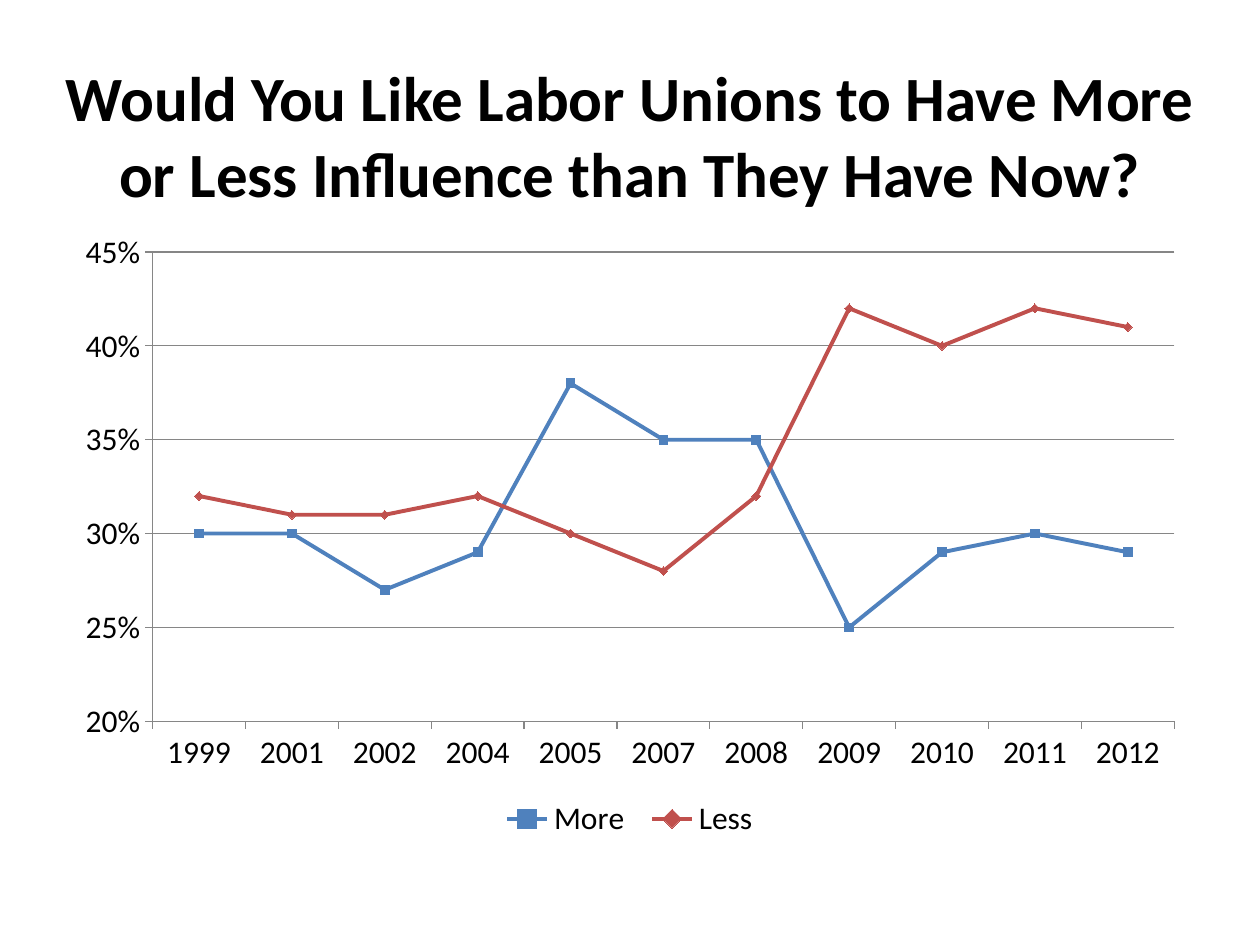
from pptx import Presentation, util as u
from pptx.chart.data import CategoryChartData
from pptx.dml.color import RGBColor
from pptx.enum import chart as ch, text

TITLE = "Would You Like Labor Unions to Have More or Less Influence than They Have Now?"
FONT = "Calibri"
BLACK = RGBColor(0x00, 0x00, 0x00)
GRAY = RGBColor(0x86, 0x86, 0x86)
BLUE = RGBColor(0x4F, 0x81, 0xBD)
RED = RGBColor(0xC0, 0x50, 0x4D)

YEARS = ["1999", "2001", "2002", "2004", "2005", "2007",
         "2008", "2009", "2010", "2011", "2012"]
SERIES = [
    ("More ", BLUE, ch.XL_MARKER_STYLE.SQUARE,
     [0.30, 0.30, 0.27, 0.29, 0.38, 0.35, 0.35, 0.25, 0.29, 0.30, 0.29]),
    ("Less", RED, ch.XL_MARKER_STYLE.DIAMOND,
     [0.32, 0.31, 0.31, 0.32, 0.30, 0.28, 0.32, 0.42, 0.40, 0.42, 0.41]),
]


def set_font(font, size, bold=False):
    font.name, font.size, font.bold = FONT, u.Pt(size), bold
    font.color.rgb = BLACK


def set_line(line, color, width):
    line.color.rgb = color
    line.width = u.Pt(width)


def add_title(slide):
    box = slide.shapes.add_textbox(u.Inches(0.25), u.Inches(0.3),
                                   u.Inches(9.5), u.Inches(1.53))
    tf = box.text_frame
    tf.word_wrap = True
    tf.vertical_anchor = text.MSO_ANCHOR.MIDDLE
    p = tf.paragraphs[0]
    p.text = TITLE
    p.alignment = text.PP_ALIGN.CENTER
    set_font(p.font, 36, bold=True)


def add_influence_chart(slide):
    data = CategoryChartData(number_format="0%")
    data.categories = YEARS
    for name, _, _, values in SERIES:
        data.add_series(name, values)
    chart = slide.shapes.add_chart(
        ch.XL_CHART_TYPE.LINE_MARKERS, u.Inches(0.5), u.Inches(1.75),
        u.Inches(9), u.Inches(4.95), data).chart
    set_font(chart.font, 18)
    chart.has_title = False
    chart.has_legend = True
    chart.legend.position = ch.XL_LEGEND_POSITION.BOTTOM
    chart.legend.include_in_layout = False

    values_axis = chart.value_axis
    values_axis.minimum_scale, values_axis.maximum_scale = 0.2, 0.45
    values_axis.major_unit = 0.05
    values_axis.tick_labels.number_format = "0%"
    values_axis.tick_labels.number_format_is_linked = False
    set_line(values_axis.major_gridlines.format.line, GRAY, 0.75)
    for axis in (chart.category_axis, values_axis):
        axis.major_tick_mark = ch.XL_TICK_MARK.OUTSIDE
        axis.minor_tick_mark = ch.XL_TICK_MARK.NONE
        set_line(axis.format.line, GRAY, 0.75)

    plot = chart.plots[0]
    plot.vary_by_categories = False
    for series, (_, color, marker, _) in zip(plot.series, SERIES):
        series.smooth = False
        set_line(series.format.line, color, 2.25)
        series.marker.style, series.marker.size = marker, 5
        series.marker.format.fill.solid()
        series.marker.format.fill.fore_color.rgb = color
        set_line(series.marker.format.line, color, 0.75)


def main():
    prs = Presentation()
    prs.slide_width, prs.slide_height = u.Inches(10), u.Inches(7.5)
    slide = prs.slides.add_slide(prs.slide_layouts[6])
    add_title(slide)
    add_influence_chart(slide)
    prs.save("out.pptx")


if __name__ == "__main__":
    main()
